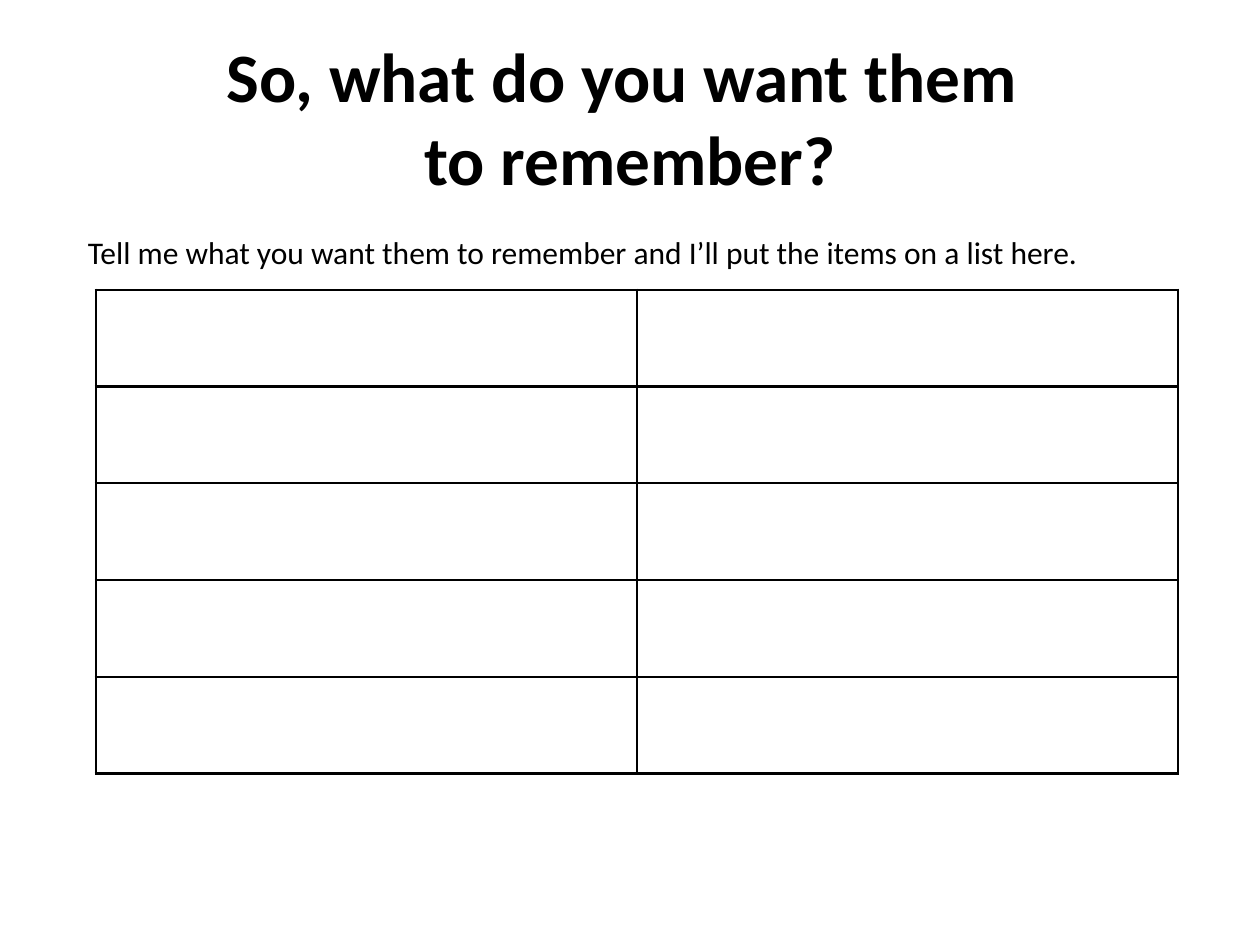
from lxml import etree
from pptx import Presentation
from pptx.dml.color import RGBColor
from pptx.enum.text import MSO_ANCHOR, PP_ALIGN
from pptx.oxml.ns import qn
from pptx.util import Inches, Pt

FONT = "Calibri"
BLACK = "000000"
ROWS, COLUMNS = 5, 2


def color(value):
    return RGBColor.from_string(value)


def add_text(page, box, text, size, bold=False,
             align=PP_ALIGN.LEFT, anchor=MSO_ANCHOR.TOP):
    frame = page.shapes.add_textbox(*map(Inches, box)).text_frame
    frame.word_wrap = True
    frame.vertical_anchor = anchor
    frame.text = text
    para = frame.paragraphs[0]
    para.alignment = align
    for span in para.runs:
        span.font.name = FONT
        span.font.size = Pt(size)
        span.font.bold = bold
        span.font.color.rgb = color(BLACK)


def set_borders(cell, line_color, width):
    properties = cell._tc.get_or_add_tcPr()
    for position, side in enumerate(("lnL", "lnR", "lnT", "lnB")):
        line = etree.Element(qn(f"a:{side}"), w=str(Pt(width)))
        fill = etree.SubElement(line, qn("a:solidFill"))
        etree.SubElement(fill, qn("a:srgbClr"), val=line_color)
        properties.insert(position, line)


def add_list_table(page, box):
    left, top, width, height = map(Inches, box)
    table = page.shapes.add_table(ROWS, COLUMNS, left, top, width, height).table
    table.first_row = False
    table.horz_banding = False
    for cell in table.iter_cells():
        cell.fill.background()
        set_borders(cell, BLACK, 1.5)


def main():
    deck = Presentation()
    deck.slide_width, deck.slide_height = Inches(10), Inches(7.5)
    page = deck.slides.add_slide(deck.slide_layouts[6])

    # Heading, with a line break after "them"
    add_text(page, (0.5, 0.3, 9, 1.25),
             "So, what do you want them \vto remember?", 39.6, bold=True,
             align=PP_ALIGN.CENTER, anchor=MSO_ANCHOR.MIDDLE)

    # Instruction
    add_text(page, (0.6, 1.8, 8.9, 4.34),
             "Tell me what you want them to remember and "
             "I’ll put the items on a list here.", 18)

    # Empty grid for the items
    add_list_table(page, (0.76, 2.3, 8.59, 3.84))

    deck.save("out.pptx")


if __name__ == "__main__":
    main()
